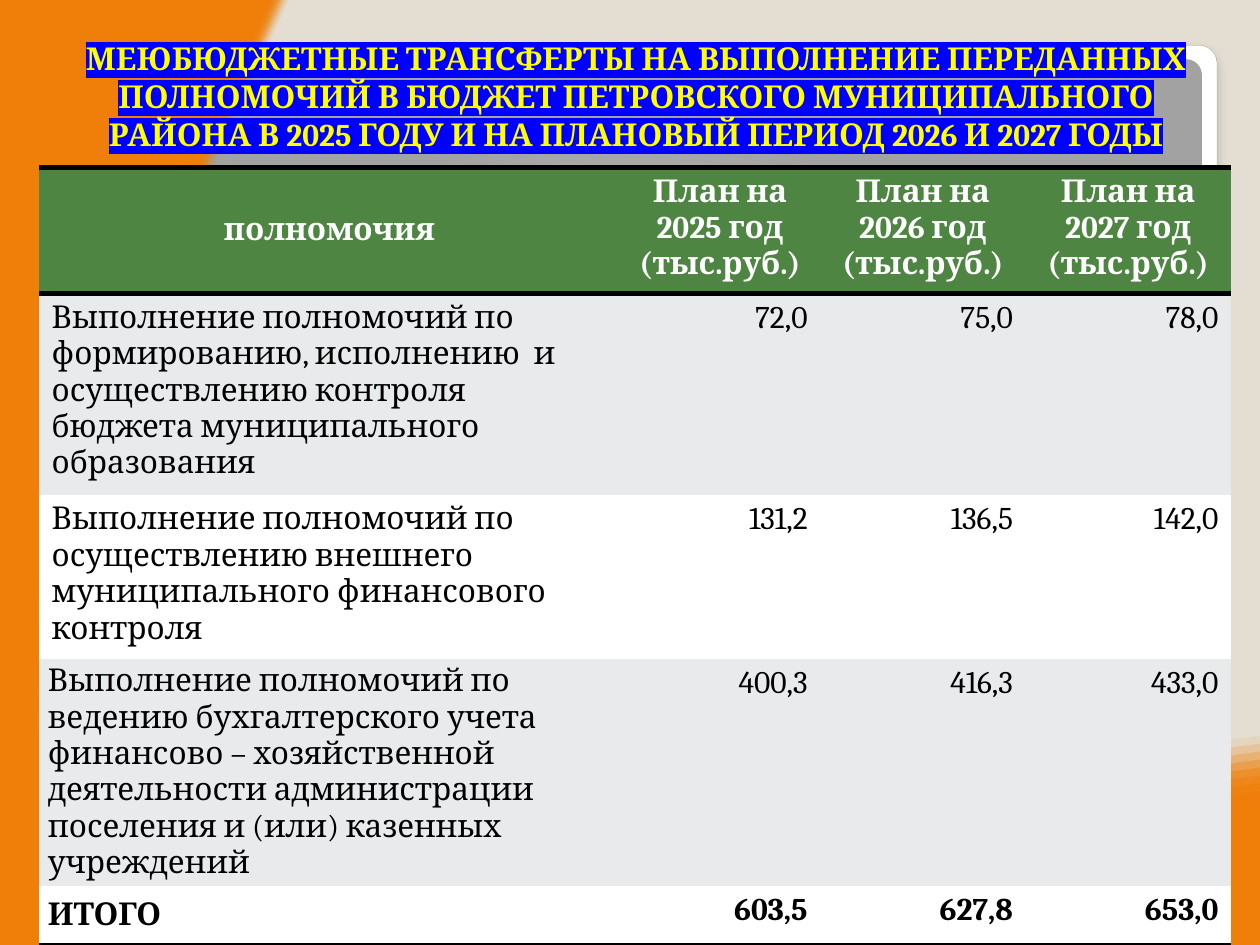
from lxml import etree
from pptx import Presentation
from pptx.dml.color import RGBColor
from pptx.enum.shapes import MSO_SHAPE
from pptx.enum.text import MSO_ANCHOR, PP_ALIGN
from pptx.oxml import parse_xml
from pptx.oxml.ns import nsdecls, qn
from pptx.util import Inches, Pt

ROUNDED = MSO_SHAPE.ROUNDED_RECTANGLE
TOP, MIDDLE, BOTTOM = MSO_ANCHOR.TOP, MSO_ANCHOR.MIDDLE, MSO_ANCHOR.BOTTOM
LEFT, CENTER, RIGHT = PP_ALIGN.LEFT, PP_ALIGN.CENTER, PP_ALIGN.RIGHT

TITLE = (
    "МЕЮБЮДЖЕТНЫЕ ТРАНСФЕРТЫ НА ВЫПОЛНЕНИЕ ПЕРЕДАННЫХ ПОЛНОМОЧИЙ "
    "В БЮДЖЕТ ПЕТРОВСКОГО МУНИЦИПАЛЬНОГО РАЙОНА В 2025 ГОДУ "
    "И НА ПЛАНОВЫЙ ПЕРИОД 2026 И 2027 ГОДЫ"
)
HEADER = ["полномочия"] + [f"План на {year} год (тыс.руб.)" for year in (2025, 2026, 2027)]
POWERS = [
    ("Выполнение полномочий по формированию, исполнению  и осуществлению "
     "контроля бюджета муниципального образования", "72,0", "75,0", "78,0"),
    ("Выполнение полномочий по осуществлению внешнего муниципального "
     "финансового контроля", "131,2", "136,5", "142,0"),
    ("Выполнение полномочий по ведению бухгалтерского учета финансово – "
     "хозяйственной деятельности администрации поселения и (или) казенных "
     "учреждений", "400,3", "416,3", "433,0"),
    ("ИТОГО", "603,5", "627,8", "653,0"),
]
COLUMN_WIDTHS = [4.61, 1.59, 1.63, 1.63]
ROW_HEIGHTS = [0.96, 1.25, 0.96, 1.44, 0.47]
TIGHT_ROWS = (3, 4)

THEME = {
    "font": "Cambria", "size": Pt(18), "rule": Pt(3),
    "backdrop": "E3DED1", "orange": "F07F09", "header": "4E8542",
    "band": "E8EAEC", "white": "FFFFFF", "ink": "000000",
    "title": "FFFF00", "highlight": "0000FF", "card_edge": "A4A4A4",
}
NO_GRID_STYLE = "{2D5ABB26-0587-4C30-8999-92F81FD0307C}"

CARD_STOPS = [(0, "FFFFFF"), (98, "FFFFFF"), (99, "F7F7F7"), (100, "DADADA")]
PANEL_STOPS = [(0, "FFFFFF"), (55, "E1E1E1"), (100, "A2A2A2")]
DOWNWARD = '<a:lin ang="5400000" scaled="0"/>'
FROM_BELOW = ('<a:path path="circle"><a:fillToRect l="50000" t="175000" '
              'r="50000" b="-75000"/></a:path>')
CARD_SHADOW = (
    f'<a:effectLst {nsdecls("a")}><a:outerShdw blurRad="76200" dist="50800" dir="5400000">'
    '<a:srgbClr val="000000"><a:alpha val="25000"/></a:srgbClr></a:outerShdw></a:effectLst>'
)

SLIDE_CORNERS = [(0, 0), (10, 0), (10, 7.5), (0, 7.5)]
INNER_EDGE = [(1.99, 0), (1.99, 0), (1.8, 0.41), (1.47, 1.15),
              (-1.21, 7.12), (0.8, 7.55), (4.91, 7.14),
              (8.06, 6.82), (10, 6.56), (10, 6.56)]
WIDEST_EDGE = [(10, 5.84), (9.98, 5.84), (8.14, 6.09), (5.18, 6.38),
               (1.21, 6.78), (-0.55, 6.32), (1.8, 1.09),
               (2.11, 0.4), (2.29, 0.01), (2.29, 0)]
NARROWEST_EDGE = [(10, 6.47), (9.74, 6.51), (7.86, 6.75), (4.98, 7.04),
                  (0.92, 7.45), (-1.07, 7.03), (1.58, 1.14),
                  (1.86, 0.52), (2.03, 0.11), (2.08, 0)]
BANDS = 11


def rgb(name):
    return RGBColor.from_string(THEME[name])


def apply(target, settings):
    for attribute, value in settings.items():
        setattr(target, attribute, value)


def lines(points):
    return [("lnTo", [point]) for point in points]


def curves(edge):
    return [("cubicBezTo", edge[at:at + 3]) for at in range(1, len(edge), 3)]


def add_wave(slide, closing_moves, opacity):
    corner, *others = [(Inches(x), Inches(y)) for x, y in SLIDE_CORNERS]
    builder = slide.shapes.build_freeform(*corner)
    builder.add_line_segments(others, close=True)
    wave = builder.convert_to_shape()
    outline = wave.element.spPr.find(".//" + qn("a:path"))
    for corner_move in list(outline):
        outline.remove(corner_move)
    moves = [("moveTo", INNER_EDGE[:1]), *curves(INNER_EDGE), *closing_moves, ("close", [])]
    for kind, points in moves:
        move = etree.SubElement(outline, qn(f"a:{kind}"))
        for x, y in points:
            etree.SubElement(move, qn("a:pt"), x=str(int(Inches(x))), y=str(int(Inches(y))))
    wave.shadow.inherit = False
    wave.fill.solid()
    wave.fill.fore_color.rgb = rgb("orange")
    wave.line.fill.background()
    if opacity < 1:
        color = wave.element.spPr.find(qn("a:solidFill"))[0]
        etree.SubElement(color, qn("a:alpha"), val=str(round(opacity * 100000)))


def add_card(slide, box, stops, direction):
    card = slide.shapes.add_shape(ROUNDED, *map(Inches, box))
    card.adjustments[0] = 0.021
    card.shadow.inherit = False
    card.line.fill.background()
    stop_xml = "".join(f'<a:gs pos="{at * 1000}"><a:srgbClr val="{color}"/></a:gs>'
                       for at, color in stops)
    gradient = parse_xml(f'<a:gradFill {nsdecls("a")} rotWithShape="1">'
                         f'<a:gsLst>{stop_xml}</a:gsLst>{direction}</a:gradFill>')
    card.element.spPr.find(qn("a:prstGeom")).addnext(gradient)
    return card


def write(frame, text, color, bold, align):
    paragraph = frame.paragraphs[0]
    paragraph.alignment = align
    run = paragraph.add_run()
    run.text = text
    apply(run.font, {"name": THEME["font"], "size": THEME["size"], "bold": bold})
    run.font.color.rgb = rgb(color)
    return run


def add_rule(cell, side):
    rule = parse_xml(f'<a:{side} {nsdecls("a")} w="{int(THEME["rule"])}"><a:solidFill>'
                     f'<a:srgbClr val="{THEME["ink"]}"/></a:solidFill></a:{side}>')
    cell._tc.get_or_add_tcPr().insert(0, rule)


def add_background(slide):
    slide.background.fill.solid()
    slide.background.fill.fore_color.rgb = rgb("backdrop")
    card = add_card(slide, (0.33, 0.36, 9.33, 6.78), CARD_STOPS, DOWNWARD)
    card.line.color.rgb = rgb("card_edge")
    card.line.width = Pt(0.16)
    effects = card.element.spPr.find(qn("a:effectLst"))
    effects.getparent().replace(effects, parse_xml(CARD_SHADOW))
    add_card(slide, (0.46, 0.47, 9.08, 6), PANEL_STOPS, FROM_BELOW)
    add_wave(slide, lines([(10, 7.5), (0, 7.5), (0, 0)]), 1)
    for band in range(BANDS):
        t = band / (BANDS - 1)
        outer = [(x + t * (u - x), y + t * (v - y))
                 for (x, y), (u, v) in zip(WIDEST_EDGE, NARROWEST_EDGE)]
        add_wave(slide, lines(outer[:1]) + curves(outer), (band + 1) / BANDS)


def add_title(slide):
    frame = slide.shapes.add_textbox(*map(Inches, (0.55, 0.16, 9, 1.1))).text_frame
    apply(frame, {"word_wrap": True, "vertical_anchor": BOTTOM})
    title = write(frame, TITLE, "title", True, CENTER)
    highlight = parse_xml(f'<a:highlight {nsdecls("a")}>'
                          f'<a:srgbClr val="{THEME["highlight"]}"/></a:highlight>')
    title.font._element.find(qn("a:solidFill")).addnext(highlight)


def add_powers_table(slide):
    rows = [HEADER, *POWERS]
    frame = slide.shapes.add_table(len(rows), len(HEADER), *map(
        Inches, (0.31, 1.33, sum(COLUMN_WIDTHS), sum(ROW_HEIGHTS))))
    table = frame.table
    frame.element.find(".//" + qn("a:tableStyleId")).text = NO_GRID_STYLE
    for column, width in zip(table.columns, COLUMN_WIDTHS):
        column.width = Inches(width)
    total = len(rows) - 1
    for r, (texts, height) in enumerate(zip(rows, ROW_HEIGHTS)):
        table.rows[r].height = Inches(height)
        header = r == 0
        fill = "header" if header else "band" if r % 2 else "white"
        for c, text in enumerate(texts):
            cell = table.cell(r, c)
            tight = c == 0 and r in TIGHT_ROWS
            cell.fill.solid()
            cell.fill.fore_color.rgb = rgb(fill)
            cell.vertical_anchor = MIDDLE if tight or (header and c == 0) else TOP
            if tight:
                apply(cell, {"margin_left": Inches(0.07), "margin_right": Inches(0.07),
                             "margin_top": 0, "margin_bottom": 0})
            align = CENTER if header else RIGHT if c else LEFT
            write(cell.text_frame, text, "white" if header else "ink",
                  r in (0, total), align)
            if r in (0, total):
                add_rule(cell, "lnB")
            if header:
                add_rule(cell, "lnT")


def main():
    """Build the slide on budget transfers for delegated powers."""
    deck = Presentation()
    apply(deck, {"slide_width": Inches(10), "slide_height": Inches(7.5)})
    slide = deck.slides.add_slide(deck.slide_layouts[6])
    add_background(slide)
    add_title(slide)
    add_powers_table(slide)
    deck.save("out.pptx")


if __name__ == "__main__":
    main()
